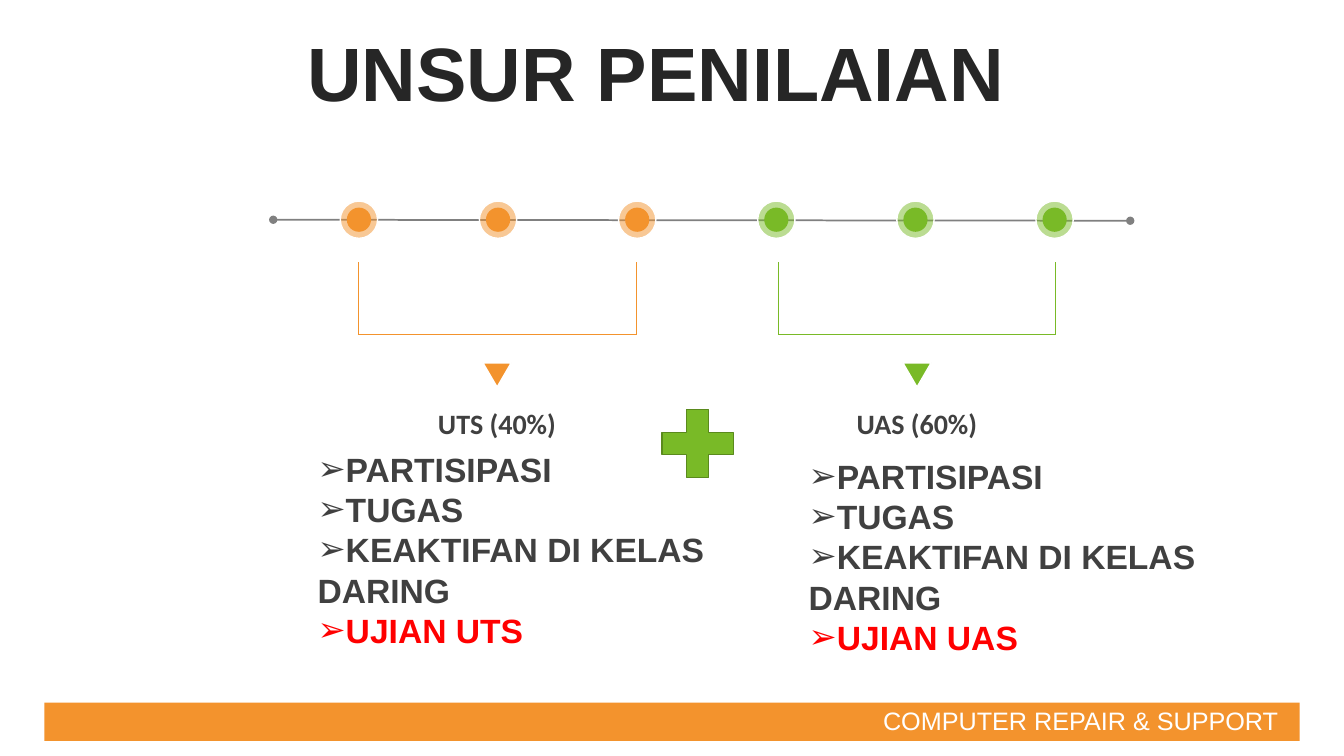
import pptx
import pptx.util
import pptx.dml.color
import pptx.enum.shapes
import pptx.enum.text
import pptx.oxml.ns
import lxml.etree

Inches = pptx.util.Inches
Shape = pptx.enum.shapes.MSO_SHAPE
Align = pptx.enum.text.PP_ALIGN
Anchor = pptx.enum.text.MSO_ANCHOR

ORANGE, GREEN, DARK_GREEN = "F3932D", "79BA27", "5A8A1D"
WHITE, GREY, INK, TITLE_INK, RED = "FFFFFF", "808080", "404040", "262626", "FF0000"


def color(value):
    return pptx.dml.color.RGBColor.from_string(value)


def add_xml(parent, tag, **attributes):
    return lxml.etree.SubElement(parent, pptx.oxml.ns.qn(tag), attributes)


def write(para, text, size=24, font="Arial", ink=INK, bold=True,
          align=Align.LEFT, bullet=None):
    para.alignment = align
    span = para.add_run()
    span.text = text
    span.font.size = pptx.util.Pt(size)
    span.font.name = font
    span.font.bold = bold
    span.font.color.rgb = color(ink)
    if bullet:
        properties = para._p.get_or_add_pPr()
        add_xml(properties, "a:buFont", typeface="Arial")
        add_xml(properties, "a:buChar", char=bullet)


class Page:
    def __init__(self, deck):
        self.shapes = deck.slides.add_slide(deck.slide_layouts[6]).shapes

    def shape(self, kind, left, top, width, height, fill, edge=None,
              alpha=None, turn=0):
        shape = self.shapes.add_shape(
            kind, Inches(left), Inches(top), Inches(width), Inches(height))
        shape.shadow.inherit = False
        shape.rotation = turn
        shape.fill.solid()
        shape.fill.fore_color.rgb = color(fill)
        if alpha:
            tint = shape._element.spPr.find(".//" + pptx.oxml.ns.qn("a:srgbClr"))
            add_xml(tint, "a:alpha", val=str(alpha * 1000))
        if edge:
            shape.line.color.rgb = color(edge)
            shape.line.width = pptx.util.Pt(1)
        else:
            shape.line.fill.background()

    def line(self, start, end, ink, width, ends=None):
        line = self.shapes.add_connector(
            pptx.enum.shapes.MSO_CONNECTOR.STRAIGHT,
            *(Inches(value) for value in (*start, *end)))
        line.line.color.rgb = color(ink)
        line.line.width = pptx.util.Pt(width)
        if ends:
            for tag in ("a:headEnd", "a:tailEnd"):
                add_xml(line.line._get_or_add_ln(), tag, type=ends)
        add_xml(line._element.spPr, "a:effectLst")

    def box(self, left, top, width, height, side=0.0, wrap=True,
            anchor=Anchor.TOP):
        frame = self.shapes.add_textbox(
            Inches(left), Inches(top), Inches(width), Inches(height)).text_frame
        frame.word_wrap = wrap
        frame.vertical_anchor = anchor
        frame.margin_left = frame.margin_right = Inches(side)
        return frame

    def dot(self, center, ink):
        for size, edge, alpha in ((0.37, WHITE, 50), (0.24, None, None)):
            self.shape(Shape.OVAL, center - size / 2, 2.18 - size / 2,
                       size, size, ink, edge, alpha)

    def bracket(self, left, right, ink):
        top, bottom = 2.6, 3.32
        corners = [(left, top), (left, bottom), (right, bottom), (right, top)]
        for start, end in zip(corners, corners[1:]):
            self.line(start, end, ink, 0.5)

    def bullets(self, frame, items):
        for index, item in enumerate(items):
            para = frame.add_paragraph() if index else frame.paragraphs[0]
            last = index == len(items) - 1
            write(para, item, ink=RED if last else INK, bullet="➢")


def main():
    deck = pptx.Presentation()
    deck.slide_width, deck.slide_height = Inches(13.33), Inches(7.5)
    page = Page(deck)

    # Footer band
    page.shape(Shape.RECTANGLE, 0.44, 6.97, 12.45, 0.38, ORANGE)
    footer = page.box(8.66, 6.95, 4.23, 0.4, 0.1, False, Anchor.MIDDLE)
    write(footer.paragraphs[0], "COMPUTER REPAIR & SUPPORT", size=18,
          ink=WHITE, bold=False)

    # Title
    title = page.box(0, 0.37, 13.01, 0.79, 0.1, True, Anchor.MIDDLE)
    title.paragraphs[0].line_spacing = 0.9
    write(title.paragraphs[0], "UNSUR PENILAIAN", size=54, ink=TITLE_INK,
          align=Align.CENTER)

    # Timeline
    page.line((2.71, 2.18), (11.21, 2.19), GREY, 1.25, ends="oval")
    for index in range(6):
        page.dot(3.56 + index * 1.38, ORANGE if index < 3 else GREEN)

    # Exam halves: bracket, pointer, heading and list
    halves = [
        ("UTS", "40%", ORANGE, 3.55, 6.31, (3.15, 4.4, 4.56, 2.12)),
        ("UAS", "60%", GREEN, 7.72, 10.47, (8.02, 4.47, 4.38, 2.12)),
    ]
    for exam, share, ink, left, right, place in halves:
        middle = (left + right) / 2
        page.bracket(left, right, ink)
        page.shape(Shape.ISOSCELES_TRIANGLE, middle - 0.14, 3.6, 0.28, 0.24,
                   ink, WHITE, turn=180)
        heading = page.box(middle - 1.12, 3.98, 2.24, 0.44)
        write(heading.paragraphs[0], f"{exam} ({share})", size=20,
              font="Calibri", align=Align.CENTER)
        page.bullets(page.box(*place), [
            "PARTISIPASI", "TUGAS", "KEAKTIFAN DI KELAS DARING", f"UJIAN {exam}"])

    # Plus sign between the halves
    page.shape(Shape.MATH_PLUS, 6.44, 3.94, 0.96, 0.92, GREEN, DARK_GREEN)

    deck.save("out.pptx")


if __name__ == "__main__":
    main()
